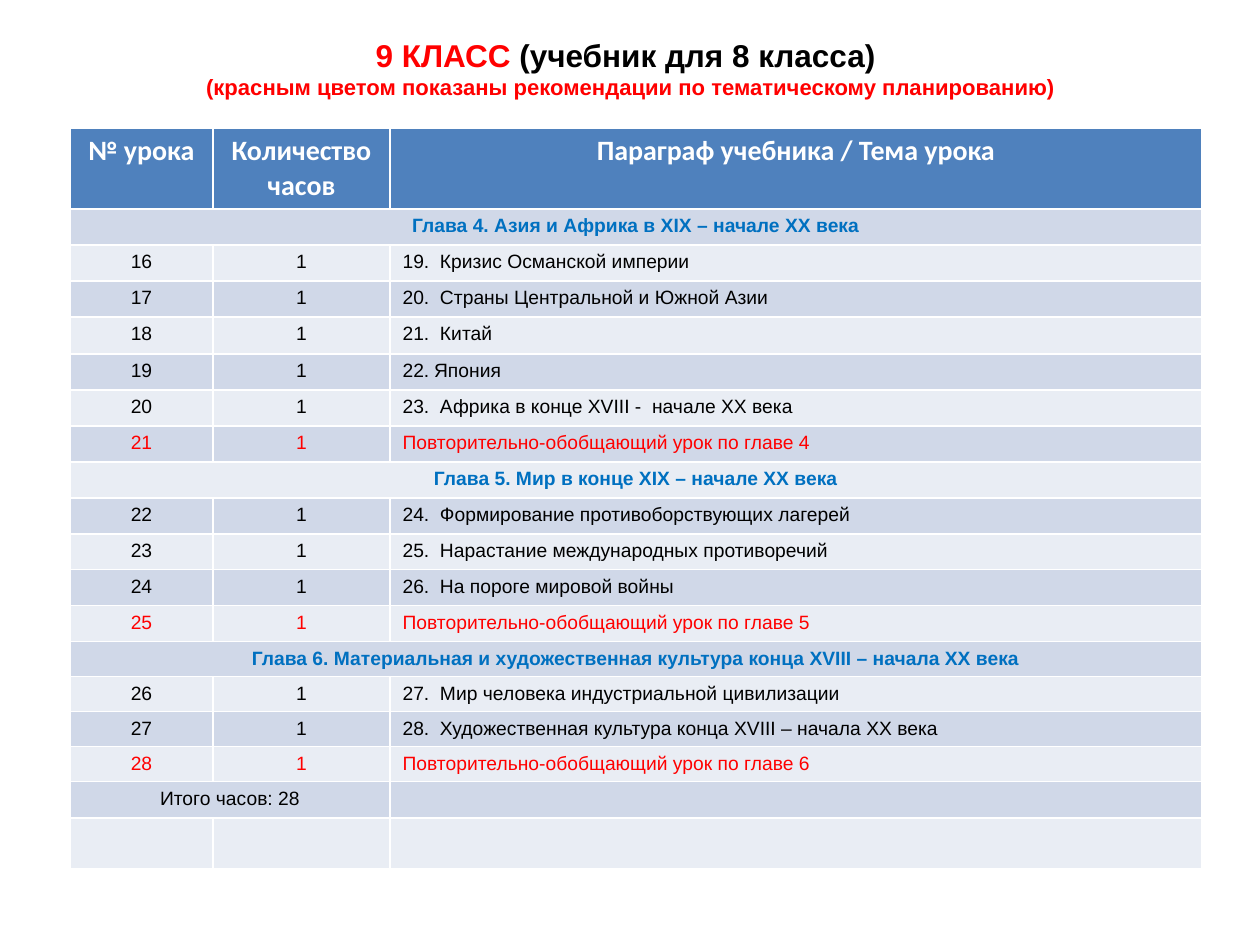
from lxml import etree
from pptx import Presentation, util as u
from pptx.dml.color import RGBColor
from pptx.enum import text
from pptx.oxml import ns

PX = 914400 // 126
COLORS = {
    "red": "FF0000", "black": "000000", "white": "FFFFFF", "chapter": "0070C0",
    "header": "4F81BD", "dark_band": "D0D8E8", "light_band": "E9EDF4",
}
CENTER, LEFT = text.PP_ALIGN.CENTER, text.PP_ALIGN.LEFT

TITLE = [
    [("9 КЛАСС ", 18, "red"), ("(учебник для 8 класса) ", 18, "black")],
    [("(красным цветом показаны рекомендации по тематическому планированию)", 12.6, "red")],
]
HEADINGS = ["№ урока", "Количество часов", "Параграф учебника / Тема урока"]
CHAPTERS = [
    (4, "Азия и Африка в XIX – начале XX века", [
        "19.  Кризис Османской империи",
        "20.  Страны Центральной и Южной Азии",
        "21.  Китай",
        "Япония",
        "23.  Африка в конце XVIII -  начале XX века",
    ]),
    (5, "Мир в конце XIX – начале XX века", [
        "24.  Формирование противоборствующих лагерей",
        "25.  Нарастание международных противоречий",
        "26.  На пороге мировой войны",
    ]),
    (6, "Материальная и художественная культура конца XVIII – начала XX века", [
        "27.  Мир человека индустриальной цивилизации",
        "28.  Художественная культура конца XVIII – начала XX века",
    ]),
]
NUMBERED = {"Япония": 22}
FIRST_LESSON = 16
COLUMNS = [143, 177, 812]
HEIGHTS = [80] + [36] * 3 + [37] + [36] * 8 + [35] * 5 + [50]


class SlideBuilder:
    font = "Arial"
    size = 11

    def __init__(self, page):
        self.page = page

    def color(self, name):
        return RGBColor.from_string(COLORS[name])

    def style(self, span, size, color, bold, font=None):
        span.font.name = font or self.font
        span.font.size = u.Pt(size)
        span.font.bold = bold
        span.font.color.rgb = self.color(color)

    def title(self, lines, left, top, width, height):
        box = self.page.shapes.title
        box.left, box.top, box.width, box.height = (n * PX for n in (left, top, width, height))
        frame = box.text_frame
        frame.auto_size = text.MSO_AUTO_SIZE.NONE
        frame.vertical_anchor = text.MSO_ANCHOR.MIDDLE
        for index, line in enumerate(lines):
            para = frame.add_paragraph() if index else frame.paragraphs[0]
            para.alignment = CENTER
            for words, size, color in line:
                span = para.add_run()
                span.text = words
                self.style(span, size, color, True)

    def table(self, left, top, columns, heights):
        frame = self.page.shapes.add_table(
            len(heights), len(columns), left * PX, top * PX,
            sum(columns) * PX, sum(heights) * PX)
        table = frame.table
        for column, width in zip(table.columns, columns):
            column.width = width * PX
        for index, (row, height) in enumerate(zip(table.rows, heights)):
            row.height = height * PX
            band = "dark_band" if index % 2 else "light_band"
            for cell in row.cells:
                cell.fill.solid()
                cell.fill.fore_color.rgb = self.color(band if index else "header")
        return table

    def cell(self, cell, words, color="black", align=CENTER, size=None, bold=False, font=None):
        para = cell.text_frame.paragraphs[0]
        para.text = words
        para.alignment = align
        for span in para.runs:
            self.style(span, size or self.size, color, bold, font)
        if not words:
            end = etree.SubElement(para._p, ns.qn("a:endParaRPr"))
            end.set("sz", str(self.size * 100))

    def number(self, cell, start):
        props = cell.text_frame.paragraphs[0]._p.get_or_add_pPr()
        props.set("marL", str(u.Inches(0.25)))
        props.set("indent", str(-u.Inches(0.25)))
        bullet = etree.SubElement(props, ns.qn("a:buAutoNum"))
        bullet.set("type", "arabicPeriod")
        bullet.set("startAt", str(start))


def fill_plan(builder, table):
    for column, heading in enumerate(HEADINGS):
        builder.cell(table.cell(0, column), heading, "white", size=16, bold=True, font="Calibri")

    row, lesson = 1, FIRST_LESSON
    for chapter, name, topics in CHAPTERS:
        table.cell(row, 0).merge(table.cell(row, 2))
        builder.cell(table.cell(row, 0), f"Глава {chapter}. {name}", "chapter", bold=True)
        row += 1
        review = f"Повторительно-обобщающий урок по главе {chapter}"
        for topic in topics + [review]:
            color = "red" if topic == review else "black"
            builder.cell(table.cell(row, 0), str(lesson), color)
            builder.cell(table.cell(row, 1), "1", color)
            builder.cell(table.cell(row, 2), topic, color, LEFT)
            if topic in NUMBERED:
                builder.number(table.cell(row, 2), NUMBERED[topic])
            row += 1
            lesson += 1

    table.cell(row, 0).merge(table.cell(row, 1))
    builder.cell(table.cell(row, 0), f"Итого часов: {lesson - 1}")
    builder.cell(table.cell(row, 2), "")


def main():
    deck = Presentation()
    deck.slide_width, deck.slide_height = u.Inches(10), u.Inches(7.5)
    builder = SlideBuilder(deck.slides.add_slide(deck.slide_layouts[5]))
    builder.title(TITLE, 63, 38, 1134, 60)
    fill_plan(builder, builder.table(70, 128, COLUMNS, HEIGHTS))
    deck.save("out.pptx")


if __name__ == "__main__":
    main()
